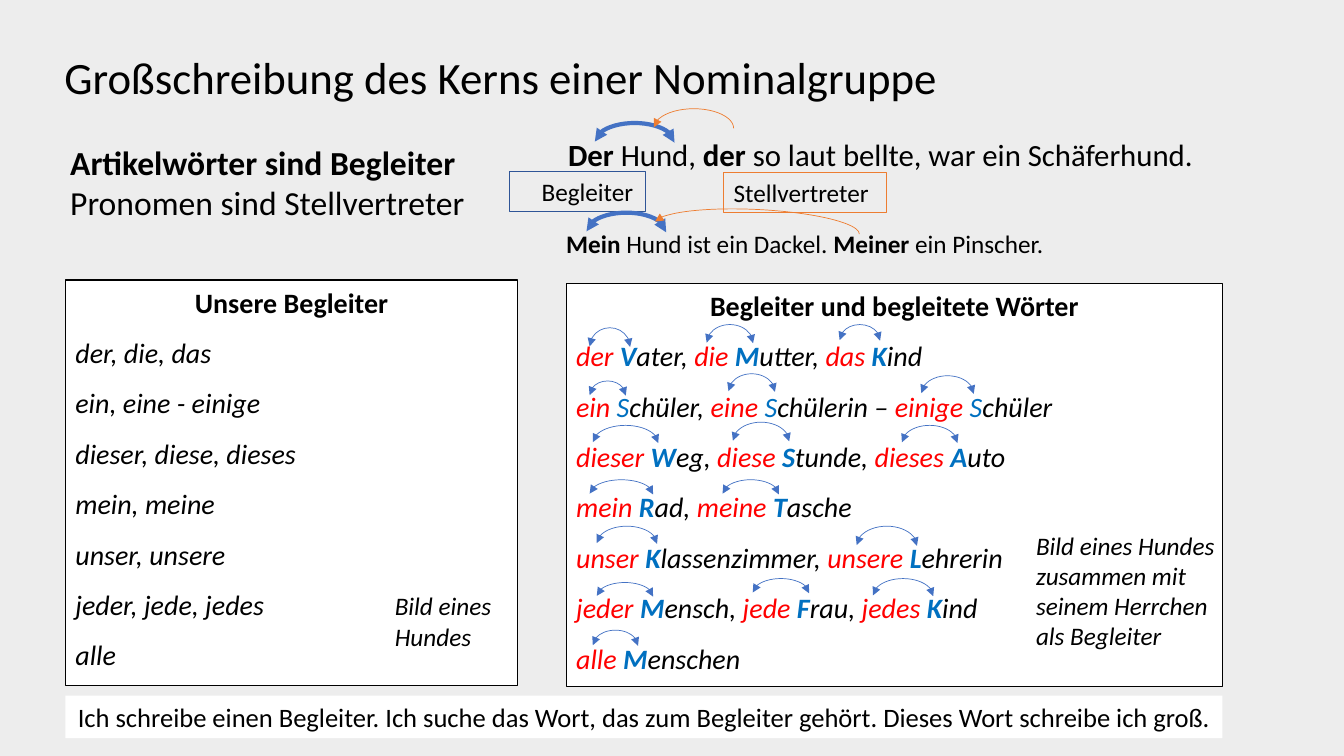
from lxml import etree
from pptx import Presentation
from pptx import util as u
from pptx.dml.color import RGBColor
from pptx.enum import shapes, text
from pptx.oxml.ns import qn

BLACK = RGBColor(0x00, 0x00, 0x00)
WHITE = RGBColor(0xFF, 0xFF, 0xFF)
GREY = RGBColor(0xED, 0xED, 0xED)
RED = RGBColor(0xFF, 0x00, 0x00)
CAPITAL_BLUE = RGBColor(0x00, 0x70, 0xC0)
ARC_BLUE = RGBColor(0x44, 0x72, 0xC4)
FRAME_BLUE = RGBColor(0x2F, 0x55, 0x97)
ORANGE = RGBColor(0xED, 0x7D, 0x31)

BOLD = {"bold": True}
ITALIC = {"italic": True}
PLAIN = {}

HEADING = "Großschreibung des Kerns einer Nominalgruppe"
BEGLEITER = ["der, die, das", "ein, eine - einige", "dieser, diese, dieses",
             "mein, meine", "unser, unsere", "jeder, jede, jedes", "alle"]

# Each row: bold capitals?, then (Begleiter, capital, rest, arc box in cm)
WORD_ROWS = [
    (True, [("der ", "V", "ater, ", (14.86, 8.26, 1.02, 0.97)),
            ("die ", "M", "utter, ", (17.81, 8.18, 1.17, 0.94)),
            ("das ", "K", "ind", (21.16, 8.18, 1.02, 0.81))]),
    (False, [("ein ", "S", "chüler, ", (14.86, 9.6, 0.91, 0.74)),
             ("eine ", "S", "chülerin – ", (18.36, 9.42, 1.17, 0.91)),
             ("einige ", "S", "chüler", (23.22, 9.47, 1.32, 0.91))]),
    (True, [("dieser ", "W", "eg, ", (14.94, 10.72, 1.65, 0.89)),
            ("diese ", "S", "tunde, ", (18.47, 10.64, 1.42, 0.97)),
            ("dieses ", "A", "uto", (22.73, 10.72, 1.4, 0.89))]),
    (True, [("mein ", "R", "ad, ", (14.86, 12.09, 1.6, 0.74)),
            ("meine ", "T", "asche", (18.21, 12.09, 1.42, 0.74))]),
    (True, [("unser ", "K", "lassenzimmer, ", (15.04, 13.26, 1.52, 0.89)),
            ("unsere ", "L", "ehrerin", (21.59, 13.26, 1.52, 0.99))]),
    (True, [("jeder ", "M", "ensch, ", (15.04, 14.68, 1.42, 0.71)),
            ("jede ", "F", "rau, ", (18.97, 14.58, 1.42, 0.74)),
            ("jedes ", "K", "ind", (22, 14.58, 1.52, 0.89))]),
    (True, [("alle ", "M", "enschen", (14.94, 15.88, 1.14, 0.79))]),
]

# Box in cm, font size, centred first line?, paragraphs of (text, format) runs
TEXTS = [
    ((9.63, 3.3, 25.12, 1.19), 22, True,
     [[("Der", BOLD), (" Hund, ", PLAIN), ("der", BOLD),
       (" so laut bellte, war ein Schäferhund.", PLAIN)]]),
    ((14.02, 5.64, 19.43, 1.02), 18, False,
     [[("Mein", BOLD), (" Hund ist ein Dackel. ", PLAIN), ("Meiner", BOLD),
       (" ein Pinscher.", PLAIN)]]),
    ((1.52, 3.45, 12.12, 2.31), 24, False,
     [[("Artikelwörter sind Begleiter", BOLD)],
      [("Pronomen sind Stellvertreter", PLAIN)]]),
    ((9.7, 14.76, 3.12, 1.8), 18, False, [[("Bild eines Hundes", ITALIC)]]),
    ((25.86, 13.23, 5.56, 3.33), 18, False,
     [[("Bild eines Hundes zusammen mit seinem Herrchen als Begleiter", ITALIC)]]),
]
RULE = ("Ich schreibe einen Begleiter. Ich suche das Wort, das zum Begleiter "
        "gehört. Dieses Wort schreibe ich groß.")

# Box in cm, colour, line width, arrow at both ends?, rotation
SENTENCE_ARCS = [
    ((14.99, 3.1, 2.01, 0.99), ARC_BLUE, 3, True, 0),
    ((14.78, 5.36, 2.01, 0.99), ARC_BLUE, 3, True, 0),
    ((16.48, 2.74, 2.01, 0.99), ORANGE, 0.5, False, 0),
    ((16.48, 5.28, 5.18, 0.99), ORANGE, 0.5, False, 2.8),
]


def cm(box):
    return [u.Cm(length) for length in box]


def format_font(font, size, values):
    settings = {"name": "Calibri", "size": u.Pt(size), "bold": False,
                "italic": False, "color": BLACK, **values}
    font.color.rgb = settings.pop("color")
    for attribute, value in settings.items():
        setattr(font, attribute, value)


def write(shape, paragraphs, size, centred=False, body_spacing=1.0):
    """Fill the frame; body_spacing applies below the first paragraph."""
    frame = shape.text_frame
    frame.word_wrap = True
    frame.auto_size = text.MSO_AUTO_SIZE.SHAPE_TO_FIT_TEXT
    frame.vertical_anchor = text.MSO_ANCHOR.TOP
    for index, runs in enumerate(paragraphs):
        paragraph = frame.add_paragraph() if index else frame.paragraphs[0]
        first_centred = centred and index == 0
        paragraph.alignment = text.PP_ALIGN.CENTER if first_centred else text.PP_ALIGN.LEFT
        paragraph.line_spacing = body_spacing if index else 1.0
        for words, values in runs:
            run = paragraph.add_run()
            run.text = words
            format_font(run.font, size, values)


def add_preset(slide, preset, box, fill=None, line=None, width=1):
    shape = slide.shapes.add_shape(preset, *cm(box))
    shape.shadow.inherit = False
    if fill is None:
        shape.fill.background()
    else:
        shape.fill.solid()
        shape.fill.fore_color.rgb = fill
    if line is None:
        shape.line.fill.background()
    else:
        shape.line.color.rgb = line
        shape.line.width = u.Pt(width)
    return shape


def add_arc(slide, box, colour=ARC_BLUE, width=0.5, both_ends=True, rotation=0):
    arc = add_preset(slide, shapes.MSO_SHAPE.ARC, box, line=colour, width=width)
    arc.adjustments[0] = 108.888
    arc.adjustments[1] = 0
    arc.rotation = rotation
    outline = arc._element.spPr.find(qn("a:ln"))
    for end in ["a:headEnd", "a:tailEnd"][:2 if both_ends else 1]:
        etree.SubElement(outline, qn(end), type="triangle")


def word_runs(bold_capitals, groups):
    runs = []
    for begleiter, capital, rest, _ in groups:
        runs += [(begleiter, {**ITALIC, "color": RED}),
                 (capital, {**ITALIC, "color": CAPITAL_BLUE, "bold": bold_capitals}),
                 (rest, ITALIC)]
    return runs


def main():
    deck = Presentation()
    deck.slide_width, deck.slide_height = cm((33.87, 19.05))
    slide = deck.slides.add_slide(deck.slide_layouts[5])
    slide.background.fill.solid()
    slide.background.fill.fore_color.rgb = GREY

    title = slide.shapes.title
    title.left, title.top, title.width, title.height = cm((1.37, 0.71, 30, 2.59))
    write(title, [[(HEADING, PLAIN)]], 32)
    title.text_frame.auto_size = text.MSO_AUTO_SIZE.NONE
    title.text_frame.vertical_anchor = text.MSO_ANCHOR.MIDDLE
    title.text_frame.paragraphs[0].line_spacing = 0.9

    rectangle = shapes.MSO_SHAPE.RECTANGLE
    columns = [
        ((1.65, 7.06, 11.4, 10.21), "Unsere Begleiter",
         [[(line, ITALIC)] for line in BEGLEITER]),
        ((14.27, 7.14, 16.54, 10.16), "Begleiter und begleitete Wörter",
         [word_runs(*row) for row in WORD_ROWS]),
    ]
    for box, heading, lines in columns:
        column = add_preset(slide, rectangle, box, WHITE, BLACK)
        write(column, [[(heading, BOLD)]] + lines, 20, True, 1.5)

    rule = add_preset(slide, rectangle, (1.65, 17.53, 29.16, 1.07), WHITE)
    write(rule, [[(RULE, PLAIN)]], 19, True)

    labels = [((12.83, 4.32, 3.43, 1.02), "Begleiter", FRAME_BLUE, 0.75, 0.82),
              ((18.24, 4.34, 4.11, 1.02), "Stellvertreter", ORANGE, 0.5, 0.25)]
    for box, word, colour, width, inset in labels:
        label = add_preset(slide, rectangle, box, line=colour, width=width)
        write(label, [[(word, PLAIN)]], 18)
        label.text_frame.margin_left = u.Cm(inset)

    for box, size, centred, paragraphs in TEXTS:
        write(slide.shapes.add_textbox(*cm(box)), paragraphs, size, centred)

    for _, groups in WORD_ROWS:
        for *_, box in groups:
            add_arc(slide, box)
    for arc in SENTENCE_ARCS:
        add_arc(slide, *arc)

    deck.save("out.pptx")


if __name__ == "__main__":
    main()
